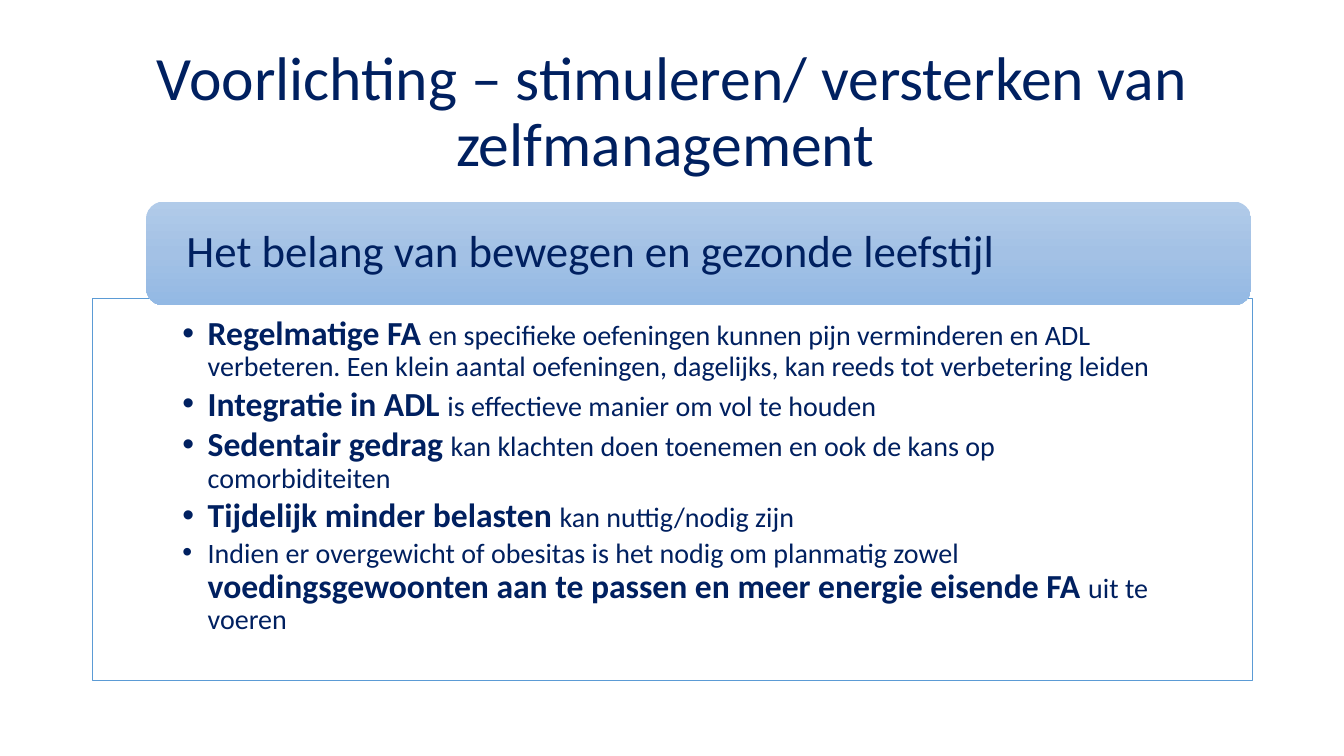
import copy

import pptx
import pptx.dml.color
import pptx.enum.shapes
import pptx.enum.text
import pptx.oxml.ns
import pptx.util
from lxml import etree

Inches = pptx.util.Inches
Pt = pptx.util.Pt
qn = pptx.oxml.ns.qn
SHAPE = pptx.enum.shapes.MSO_SHAPE
ALIGN = pptx.enum.text.PP_ALIGN
ANCHOR = pptx.enum.text.MSO_ANCHOR

COLORS = {
    "text": "002060",
    "panel": "FFFFFF",
    "border": "5B9BD5",
    "header_top": "B1CBE9",
    "header_middle": "A3C1E5",
    "header_bottom": "93B9E4",
}
# Each bullet is a list of (text, bold) runs.
BULLETS = [
    [("Regelmatige FA ", True),
     ("en specifieke oefeningen kunnen pijn verminderen en ADL verbeteren. "
      "Een klein aantal oefeningen, dagelijks, kan reeds tot verbetering leiden", False)],
    [("Integratie in ADL ", True),
     ("is effectieve manier om vol te houden", False)],
    [("Sedentair gedrag ", True),
     ("kan klachten doen toenemen en ook de kans op comorbiditeiten", False)],
    [("Tijdelijk minder belasten ", True),
     ("kan nuttig/nodig zijn", False)],
    [("Indien er overgewicht of obesitas is het nodig om planmatig zowel ", False),
     ("voedingsgewoonten aan te passen en meer energie eisende FA ", True),
     ("uit te voeren", False)],
]


def rgb(name):
    return pptx.dml.color.RGBColor.from_string(COLORS[name])


def add_run(p, text, size, bold=False):
    p.line_spacing = 0.9
    r = p.add_run()
    r.text = text
    r.font.name = "Calibri"
    r.font.size = Pt(size)
    r.font.bold = bold
    r.font.color.rgb = rgb("text")


prs = pptx.Presentation()
prs.slide_width = Inches(13.33)
prs.slide_height = Inches(7.5)
s = prs.slides.add_slide(prs.slide_layouts[6])

# Title
title = s.shapes.add_textbox(Inches(0.92), Inches(0.4), Inches(11.5), Inches(1.45))
tf = title.text_frame
tf.word_wrap = True
tf.vertical_anchor = ANCHOR.MIDDLE
p = tf.paragraphs[0]
p.alignment = ALIGN.CENTER
add_run(p, "Voorlichting – stimuleren/ versterken van zelfmanagement ", 44)

# Panel with bullets
panel = s.shapes.add_shape(SHAPE.RECTANGLE, Inches(0.92), Inches(2.96),
                           Inches(11.5), Inches(3.79))
panel.shadow.inherit = False
panel.fill.solid()
panel.fill.fore_color.rgb = rgb("panel")
panel.line.color.rgb = rgb("border")
panel.line.width = Pt(0.5)
tf = panel.text_frame
tf.word_wrap = True
tf.vertical_anchor = ANCHOR.TOP
tf.margin_left = tf.margin_right = Inches(0.89)
tf.margin_top = Inches(0.18)
tf.margin_bottom = Inches(0.19)
for i, runs in enumerate(BULLETS):
    p = tf.paragraphs[0] if i == 0 else tf.add_paragraph()
    p.alignment = ALIGN.LEFT
    p.level = 1
    p.space_after = Pt(3)
    pPr = p._p.get_or_add_pPr()
    pPr.set("marL", str(Inches(0.25)))
    pPr.set("indent", str(-Inches(0.25)))
    etree.SubElement(pPr, qn("a:buFont")).set("typeface", "Arial")
    etree.SubElement(pPr, qn("a:buChar")).set("char", "•")
    for text, bold in runs:
        add_run(p, text, 24 if bold else 20, bold)

# Header bar over the top edge of the panel
header = s.shapes.add_shape(SHAPE.ROUNDED_RECTANGLE, Inches(1.45), Inches(2),
                            Inches(10.96), Inches(1.03))
header.shadow.inherit = False
header.line.fill.background()
header.fill.gradient()
header.fill.gradient_angle = 270
first_stop = header._element.spPr.find(".//" + qn("a:gs"))
first_stop.addnext(copy.deepcopy(first_stop))
stop_names = ["header_top", "header_middle", "header_bottom"]
for i, (stop, name) in enumerate(zip(header.fill.gradient_stops, stop_names)):
    stop.position = i / 2
    stop.color.rgb = rgb(name)
tf = header.text_frame
tf.word_wrap = True
tf.vertical_anchor = ANCHOR.MIDDLE
tf.margin_left = tf.margin_right = Inches(0.35)
tf.margin_top = tf.margin_bottom = Inches(0.05)
p = tf.paragraphs[0]
p.alignment = ALIGN.LEFT
add_run(p, "Het belang van bewegen en gezonde leefstijl", 32)

prs.save("out.pptx")
